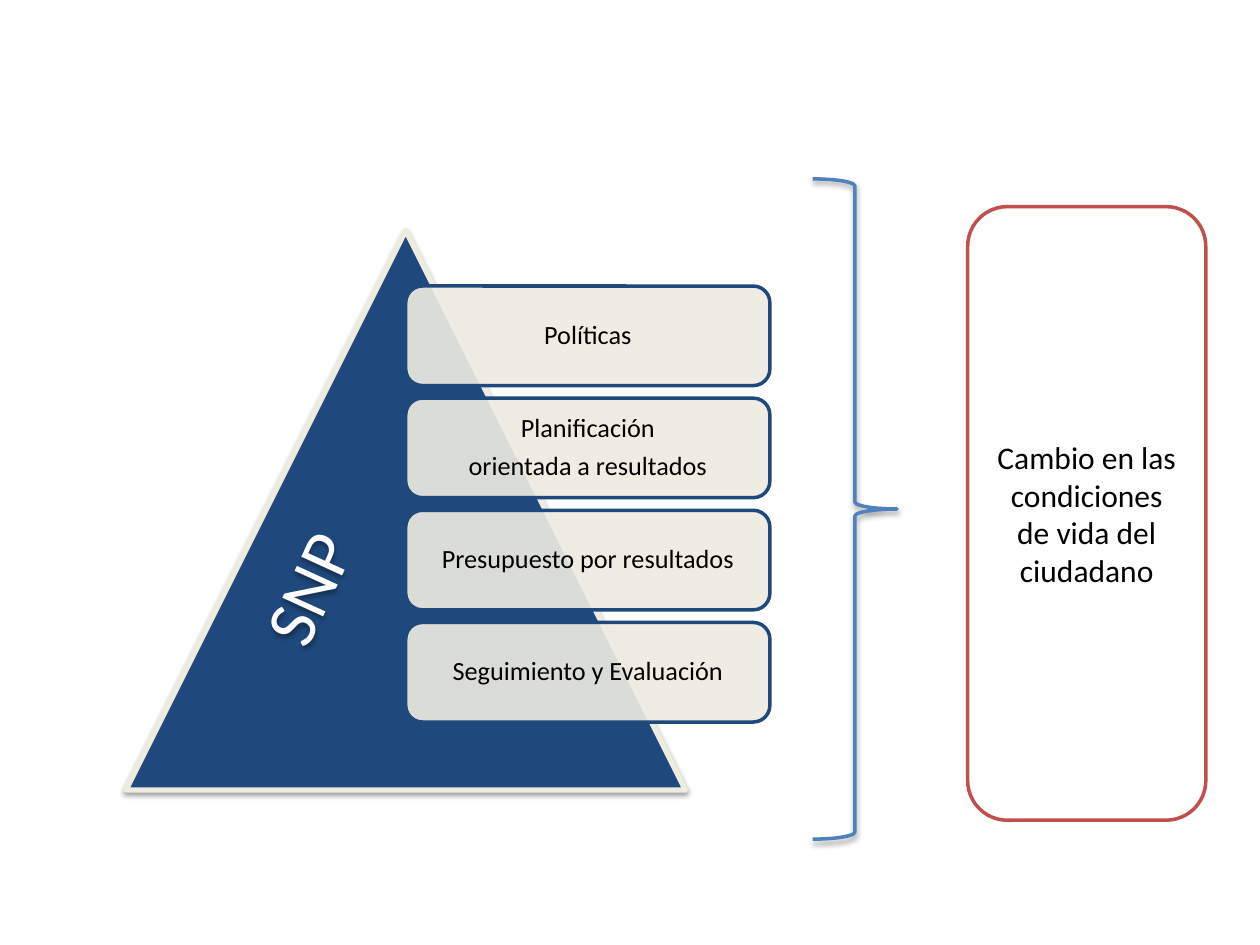
from lxml import etree
from pptx import Presentation
from pptx.dml.color import RGBColor
from pptx.enum.shapes import MSO_SHAPE as SHAPE
from pptx.enum.text import MSO_ANCHOR as ANCHOR, PP_ALIGN as ALIGN
from pptx.oxml import parse_xml
from pptx.oxml.ns import nsdecls, qn
from pptx.util import Inches, Pt

NAVY = RGBColor(0x1F, 0x49, 0x7D)
CREAM = RGBColor(0xEE, 0xEC, 0xE1)
BLUE = RGBColor(0x4F, 0x81, 0xBD)
RED = RGBColor(0xC0, 0x50, 0x4D)
WHITE = RGBColor(0xFF, 0xFF, 0xFF)
BLACK = RGBColor(0, 0, 0)

COLS, ROWS = 100, 75
SHADOW = (
    f'<a:effectLst {nsdecls("a")}>'
    '<a:outerShdw blurRad="40000" dist="20000" dir="5400000" rotWithShape="0">'
    '<a:srgbClr val="000000"><a:alpha val="38000"/></a:srgbClr>'
    '</a:outerShdw></a:effectLst>'
)


class Deck:
    font = "Calibri"

    def __init__(self):
        self.prs = Presentation()
        self.prs.slide_width, self.prs.slide_height = Inches(10), Inches(7.5)
        self.slide = self.prs.slides.add_slide(self.prs.slide_layouts[6])

    def shape(self, kind, col, row, cols, rows, fill=None, line=None,
              weight=2, opacity=100, shadow=False):
        cw, rh = self.prs.slide_width / COLS, self.prs.slide_height / ROWS
        sp = self.slide.shapes.add_shape(
            kind, int(col * cw), int(row * rh), int(cols * cw), int(rows * rh))
        sp.shadow.inherit = False
        if fill is None:
            sp.fill.background()
        else:
            sp.fill.solid()
            sp.fill.fore_color.rgb = fill
        if opacity < 100:
            clr = sp.fill._xPr.find(qn("a:solidFill"))[0]
            etree.SubElement(clr, qn("a:alpha")).set("val", str(opacity * 1000))
        if line is None:
            sp.line.fill.background()
        else:
            sp.line.color.rgb = line
            sp.line.width = Pt(weight)
        if shadow:
            effects = sp._element.spPr.find(qn("a:effectLst"))
            effects.getparent().replace(effects, parse_xml(SHADOW))
        return sp

    def text(self, sp, lines, size, color, inset=None, spacing=None, after=None):
        tf = sp.text_frame
        tf.word_wrap = True
        tf.vertical_anchor = ANCHOR.MIDDLE
        if inset is not None:
            tf.margin_left = tf.margin_right = Inches(inset)
            tf.margin_top = tf.margin_bottom = Inches(inset)
        for i, line in enumerate(lines):
            p = tf.add_paragraph() if i else tf.paragraphs[0]
            p.alignment = ALIGN.CENTER
            if spacing is not None:
                p.line_spacing = spacing
            if after is not None:
                p.space_after = Pt(after)
            r = p.add_run()
            r.text = line
            r.font.name, r.font.size = self.font, Pt(size)
            r.font.color.rgb = color

    def card(self, col, row, cols, rows, lines):
        sp = self.shape(SHAPE.ROUNDED_RECTANGLE, col, row, cols, rows,
                        CREAM, NAVY, opacity=90)
        self.text(sp, lines, 15, BLACK, inset=0.06, spacing=0.9, after=5.25)


def main():
    deck = Deck()
    deck.shape(SHAPE.ISOSCELES_TRIANGLE, 10, 18.3, 44.4, 44.4,
               NAVY, CREAM, weight=3, shadow=True)

    components = [
        ["Políticas"],
        ["Planificación", "orientada a resultados"],
        ["Presupuesto por resultados"],
        ["Seguimiento y Evaluación"],
    ]
    for i, lines in enumerate(components):
        deck.card(32.2, 22.7 + 8.9 * i, 28.9, 7.9, lines)

    snp = deck.shape(SHAPE.ROUNDED_RECTANGLE, 17.9, 42, 12.8, 9.2, shadow=True)
    snp.rotation = 294.6
    deck.text(snp, ["SNP"], 40, WHITE)

    deck.shape(SHAPE.RIGHT_BRACE, 64.5, 14.2, 6.7, 52.4, line=BLUE, shadow=True)
    outcome = deck.shape(SHAPE.ROUNDED_RECTANGLE, 76.8, 16.4, 18.9, 48.7, WHITE, RED)
    deck.text(outcome, ["Cambio en las condiciones de vida del ciudadano"], 18, BLACK)

    deck.prs.save("out.pptx")


if __name__ == "__main__":
    main()
